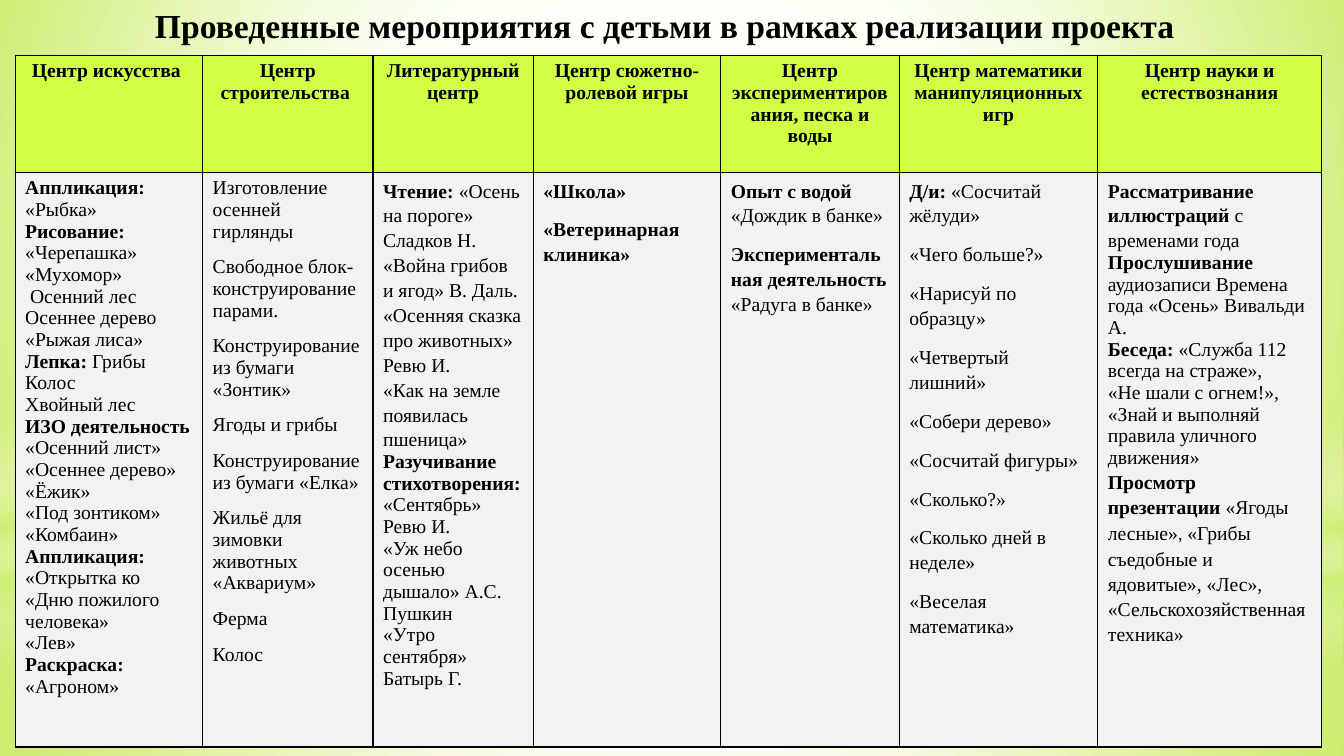
from lxml import etree
from pptx import Presentation
from pptx.dml.color import RGBColor
from pptx.enum.shapes import MSO_SHAPE
from pptx.enum.text import MSO_ANCHOR, MSO_AUTO_SIZE, PP_ALIGN
from pptx.oxml.ns import qn
from pptx.util import Inches, Pt

RECTANGLE, OVAL = MSO_SHAPE.RECTANGLE, MSO_SHAPE.OVAL
CENTER, LEFT = PP_ALIGN.CENTER, PP_ALIGN.LEFT
TOP, MIDDLE = MSO_ANCHOR.TOP, MSO_ANCHOR.MIDDLE

SLIDE_WIDTH, SLIDE_HEIGHT = Inches(13.33), Inches(7.5)
COLORS = {"text": "000000", "border": "000000", "header": "D0FF44", "body": "F2F2F2",
          "white": "FFFFFF", "green": "CAF278", "cream": "F7FFE7", "olive": "DAD749"}
SERIF, SANS = "Times New Roman", "Calibri"

# Paragraph formats
TIGHT = {"alignment": LEFT}
INDENTED = {"alignment": LEFT, "indent": Pt(3.5)}
SPACED = {"alignment": LEFT, "space_after": Pt(10)}
LOOSE = {"alignment": LEFT, "line_spacing": 1.15}
AIRY = {**LOOSE, **SPACED}
CENTERED = {"alignment": CENTER}

TITLE = "Проведенные мероприятия с детьми в рамках реализации проекта "

# Gradient stops: position, colour, opacity in percent
CENTER_FOCUS = (50, 50, 50, 50)
BACKGROUND = [(9, "cream", 100), (52, "cream", 100), (100, "olive", 100)]
# Backdrop layers: preset, shares of the slide (left, top, width, height), stops, focus
BACKDROPS = [
    (RECTANGLE, (0, 0.74, 1, 0.26),
     [(0, "white", 91), (37, "white", 76), (100, "green", 79)], CENTER_FOCUS),
    (RECTANGLE, (0, 0, 1, 0.74),
     [(0, "white", 89), (48, "white", 62), (100, "green", 79)], CENTER_FOCUS),
    (RECTANGLE, (0, 0.55, 1, 0.33),
     [(0, "white", 0), (29, "white", 30), (45, "green", 40), (55, "white", 26),
      (65, "green", 60), (100, "white", 0)], None),
    (OVAL, (0, 0.23, 1, 0.74), [(0, "white", 100), (56, "white", 0)], CENTER_FOCUS),
]

# Columns: width, heading, paragraphs; *bold*, ~sans~
ROW_HEIGHTS = (1.16, 5.7)
CENTERS = [
    (1.86, "Центр искусства ", [
        (TIGHT, ["*Аппликация:* «Рыбка»", "*Рисование: *«Черепашка» «Мухомор»"]),
        (INDENTED, ["Осенний лес"]),
        (TIGHT, ["Осеннее дерево", "«Рыжая лиса»", "*Лепка: *Грибы", "Колос",
                 "Хвойный лес", "*ИЗО деятельность *«Осенний лист»",
                 "«Осеннее дерево»", "«Ёжик»", "«Под зонтиком»", "«Комбаин»",
                 "*Аппликация:*", "«Открытка ко «Дню пожилого человека»", "«Лев»",
                 "*Раскраска: *«Агроном»"])]),
    (1.69, "Центр строительства ", [
        (SPACED, ["Изготовление осенней гирлянды",
                  "Свободное блок-конструирование парами.",
                  "Конструирование из бумаги «Зонтик»", "Ягоды и грибы",
                  "Конструирование из бумаги «Елка»",
                  "Жильё для зимовки животных «Аквариум»", "Ферма", "Колос"])]),
    (1.59, "Литературный центр", [
        (LOOSE, ["*Чтение: *«Осень на пороге» Сладков Н. «Война грибов и ягод» "
                 "В. Даль. «Осенняя сказка про животных» Ревю И.",
                 "«Как на земле появилась пшеница»"]),
        (TIGHT, ["*Разучивание стихотворения: *«Сентябрь» Ревю И.",
                 "«Уж небо осенью дышало» А.С. Пушкин",
                 "«Утро сентября» Батырь Г."])]),
    (1.86, "Центр сюжетно-ролевой игры", [
        (AIRY, ["*«Школа»*", "*«Ветеринарная клиника»*"])]),
    (1.77, "Центр экспериментирования, песка и воды", [
        (AIRY, ["*Опыт с водой *«Дождик в банке»",
                "*Экспериментальная деятельность *«Радуга в банке»"])]),
    (1.97, "Центр математики манипуляционных игр", [
        (AIRY, ["*Д/и:* «Сосчитай жёлуди»", "«Чего больше?»", "«Нарисуй по образцу»",
                "«Четвертый лишний»", "«Собери дерево»", "«Сосчитай фигуры»",
                "«Сколько?»", "«Сколько дней в неделе»", "«Веселая математика»"])]),
    (2.22, "Центр науки и естествознания", [
        (LOOSE, ["*Рассматривание иллюстраций *с временами года"]),
        (TIGHT, ["*Прослушивание *аудиозаписи Времена года «Осень» Вивальди А.",
                 "*Беседа:* «Служба 112 всегда на страже»,",
                 "«Не шали с огнем!», «Знай и выполняй правила уличного движения»"]),
        (AIRY, ["*Просмотр презентации *«Ягоды лесные»~, ~«Грибы съедобные и "
                "ядовитые», «Лес», «Сельскохозяйственная техника»"])]),
]


def color(name):
    return RGBColor.from_string(COLORS[name])


def add_element(parent, tag, **attributes):
    values = {name: str(value) for name, value in attributes.items()}
    return etree.SubElement(parent, qn(tag), values)


def paint_gradient(fill, owner, stops, focus):
    """Radial gradient around the focus, or a vertical one without it."""
    fill.gradient()
    gradient = owner.find(".//" + qn("a:gradFill"))
    for child in list(gradient):
        gradient.remove(child)
    stop_list = add_element(gradient, "a:gsLst")
    for position, name, opacity in stops:
        stop = add_element(stop_list, "a:gs", pos=position * 1000)
        tint = add_element(stop, "a:srgbClr", val=COLORS[name])
        add_element(tint, "a:alpha", val=opacity * 1000)
    if focus:
        sides = {side: share * 1000 for side, share in zip("ltrb", focus)}
        add_element(add_element(gradient, "a:path", path="circle"), "a:fillToRect", **sides)
    else:
        add_element(gradient, "a:lin", ang=90 * 60000, scaled=0)


def add_backdrop(slide, preset, shares, stops, focus):
    sizes = (SLIDE_WIDTH, SLIDE_HEIGHT) * 2
    box = [int(share * size) for share, size in zip(shares, sizes)]
    shape = slide.shapes.add_shape(preset, *box)
    shape.shadow.inherit = False
    shape.line.fill.background()
    paint_gradient(shape.fill, shape.element, stops, focus)


def write_paragraph(paragraph, text, layout, size=14, bold=False):
    for name, value in layout.items():
        if name == "indent":
            paragraph._p.get_or_add_pPr().set("marL", str(int(value)))
        else:
            setattr(paragraph, name, value)
    for part_index, part in enumerate(text.split("*")):
        for piece_index, piece in enumerate(part.split("~")):
            if not piece:
                continue
            run = paragraph.add_run()
            run.text = piece
            values = {"size": Pt(size), "bold": bold or part_index % 2 == 1,
                      "name": SANS if piece_index % 2 else SERIF}
            for name, value in values.items():
                setattr(run.font, name, value)
            run.font.color.rgb = color("text")


def add_title(slide):
    title = slide.shapes.title
    box = {"left": 1.2, "top": 0, "width": 10.87, "height": 0.5}
    for name, value in box.items():
        setattr(title, name, Inches(value))
    frame = title.text_frame
    frame.auto_size, frame.word_wrap = MSO_AUTO_SIZE.NONE, True
    frame.vertical_anchor = MIDDLE
    write_paragraph(frame.paragraphs[0], TITLE, CENTERED, size=24, bold=True)
    title.element.getparent().append(title.element)  # in front of the backdrops


def fill_cell(cell, fill, groups, bold=False):
    properties = cell._tc.get_or_add_tcPr()
    for side in ("a:lnL", "a:lnR", "a:lnT", "a:lnB"):
        line = add_element(properties, side, w=Pt(1))
        add_element(add_element(line, "a:solidFill"), "a:srgbClr", val=COLORS["border"])
    cell.fill.solid()
    cell.fill.fore_color.rgb = color(fill)
    cell.vertical_anchor = TOP
    frame = cell.text_frame
    lines = [(text, layout) for layout, texts in groups for text in texts]
    for index, (text, layout) in enumerate(lines):
        paragraph = frame.add_paragraph() if index else frame.paragraphs[0]
        write_paragraph(paragraph, text, layout, bold=bold)


def add_centers_table(slide):
    width = sum(center[0] for center in CENTERS)
    table = slide.shapes.add_table(
        len(ROW_HEIGHTS), len(CENTERS), Inches(0.15), Inches(0.55),
        Inches(width), Inches(sum(ROW_HEIGHTS))).table
    table.horz_banding = False
    for row, height in zip(table.rows, ROW_HEIGHTS):
        row.height = Inches(height)
    for index, (column_width, heading, groups) in enumerate(CENTERS):
        table.columns[index].width = Inches(column_width)
        fill_cell(table.cell(0, index), "header", [(CENTERED, [heading])], bold=True)
        fill_cell(table.cell(1, index), "body", groups)


def main():
    presentation = Presentation()
    presentation.slide_width, presentation.slide_height = SLIDE_WIDTH, SLIDE_HEIGHT
    slide = presentation.slides.add_slide(presentation.slide_layouts[5])
    # Background and its light layers
    paint_gradient(slide.background.fill, slide.element, BACKGROUND, (20, 10, 20, 60))
    for backdrop in BACKDROPS:
        add_backdrop(slide, *backdrop)
    # Content
    add_title(slide)
    add_centers_table(slide)
    presentation.save("out.pptx")


if __name__ == "__main__":
    main()
